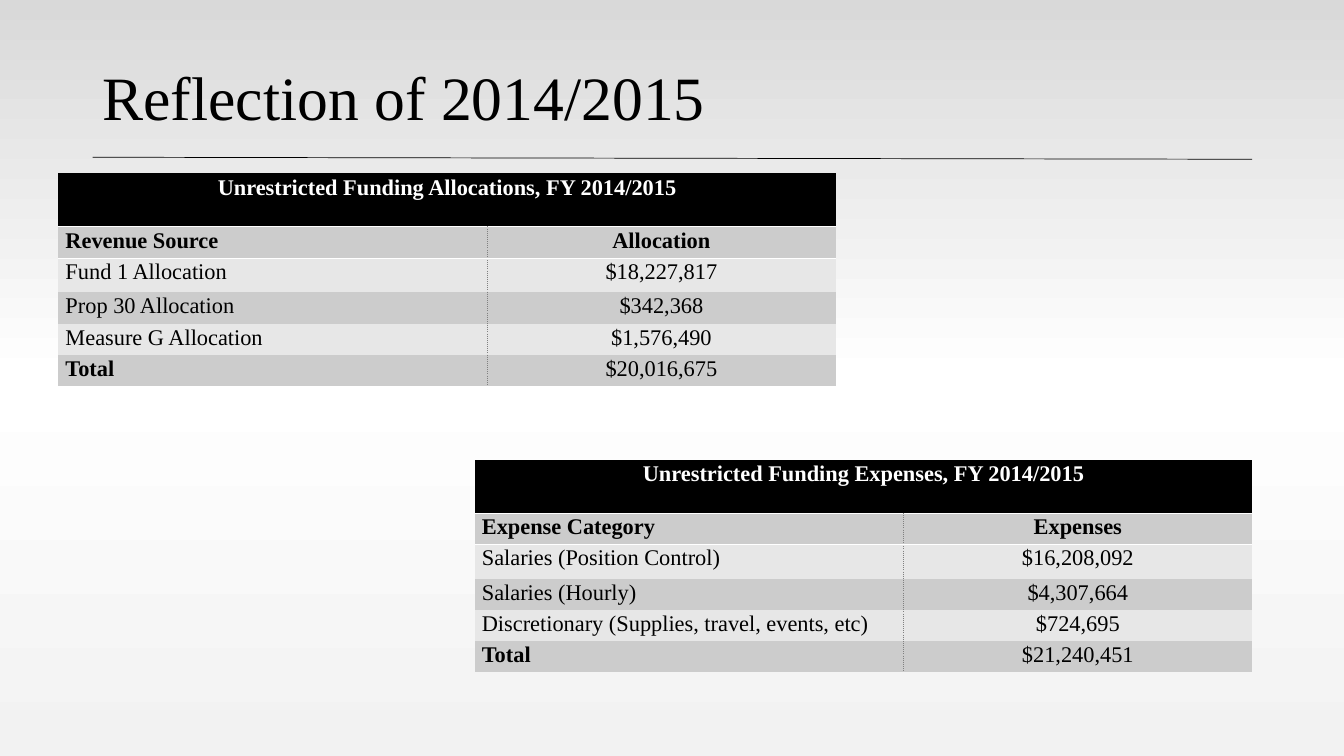
from copy import deepcopy

from pptx import Presentation
from pptx.dml.color import RGBColor
from pptx.enum.shapes import MSO_CONNECTOR
from pptx.enum.text import MSO_ANCHOR, PP_ALIGN
from pptx.oxml.ns import qn
from pptx.util import Inches, Pt
from lxml.etree import SubElement

BLACK = RGBColor(0x00, 0x00, 0x00)
WHITE = RGBColor(0xFF, 0xFF, 0xFF)
GRAY = RGBColor(0x80, 0x80, 0x80)
DARK_BAND = RGBColor(0xCC, 0xCC, 0xCC)
LIGHT_BAND = RGBColor(0xE7, 0xE7, 0xE7)
BACKGROUND = [(0, RGBColor(0xD9, 0xD9, 0xD9)), (0.5, WHITE),
              (1, RGBColor(0xF2, 0xF2, 0xF2))]
NO_TABLE_STYLE = "{2D5ABB26-0587-4C30-8999-92F81FD0307C}"


class BudgetSlide:
    font = "Times New Roman"
    column_widths = (4.25, 3.46)
    row_heights = (0.53, 0.31, 0.34, 0.31, 0.31, 0.31)

    def __init__(self, slide):
        self.slide = slide

    def background(self, colors):
        fill = self.slide.background.fill
        fill.gradient()
        fill.gradient_angle = 270
        stop_list = self.slide.element.find(".//" + qn("a:gsLst"))
        stop_list.append(deepcopy(stop_list[0]))
        for stop, (position, color) in zip(fill.gradient_stops, colors):
            stop.position = position
            stop.color.rgb = color

    def style(self, paragraph, size, color, bold, align, spacing):
        paragraph.alignment = align
        paragraph.line_spacing = spacing
        font = paragraph.font
        font.name, font.size, font.bold = self.font, Pt(size), bold
        font.color.rgb = color

    def title(self, text, left, top, width, height):
        box = self.slide.shapes.add_textbox(
            Inches(left), Inches(top), Inches(width), Inches(height))
        frame = box.text_frame
        frame.word_wrap = True
        frame.vertical_anchor = MSO_ANCHOR.MIDDLE
        frame.text = text
        self.style(frame.paragraphs[0], 44, BLACK, False, PP_ALIGN.LEFT, 0.9)

    def rule(self, x1, y1, x2, y2):
        rule = self.slide.shapes.add_connector(
            MSO_CONNECTOR.STRAIGHT, Inches(x1), Inches(y1), Inches(x2), Inches(y2))
        rule.line.color.rgb = BLACK
        rule.line.width = Pt(0.5)
        SubElement(rule.element.spPr, qn("a:effectLst"))

    def border(self, cell, side, color, dash):
        line = SubElement(cell._tc.get_or_add_tcPr(), qn("a:ln" + side), w=str(Pt(0.5)))
        fill = SubElement(line, qn("a:solidFill"))
        SubElement(fill, qn("a:srgbClr"), val=str(color))
        SubElement(line, qn("a:prstDash"), val=dash)

    def cell(self, cell, text, fill, color, bold, align):
        cell.margin_left = cell.margin_right = Inches(0.07)
        cell.margin_top = cell.margin_bottom = 0
        cell.fill.solid()
        cell.fill.fore_color.rgb = fill
        cell.text = text
        self.style(cell.text_frame.paragraphs[0], 16, color, bold, align, 1.07)

    def budget_table(self, left, top, heading, rows):
        frame = self.slide.shapes.add_table(
            len(rows) + 1, 2, Inches(left), Inches(top),
            Inches(sum(self.column_widths)), Inches(sum(self.row_heights)))
        table = frame.table
        table.first_row = table.horz_banding = False
        table._tbl.tblPr.find(qn("a:tableStyleId")).text = NO_TABLE_STYLE
        for column, width in zip(table.columns, self.column_widths):
            column.width = Inches(width)
        for row, height in zip(table.rows, self.row_heights):
            row.height = Inches(height)

        # Heading across both columns
        heading_cell = table.cell(0, 0)
        heading_cell.merge(table.cell(0, 1))
        self.border(heading_cell, "B", WHITE, "solid")
        self.cell(heading_cell, heading, BLACK, WHITE, True, PP_ALIGN.CENTER)

        # Banded rows; the column heads and the total label are bold
        for r, (label, amount) in enumerate(rows, start=1):
            band = DARK_BAND if r % 2 else LIGHT_BAND
            label_cell, amount_cell = table.cell(r, 0), table.cell(r, 1)
            self.border(label_cell, "R", GRAY, "sysDot")
            self.border(amount_cell, "L", GRAY, "sysDot")
            if r == 1:
                for head_cell in (label_cell, amount_cell):
                    self.border(head_cell, "T", WHITE, "solid")
                    self.border(head_cell, "B", WHITE, "solid")
            self.cell(label_cell, label, band, BLACK, r in (1, len(rows)), PP_ALIGN.LEFT)
            self.cell(amount_cell, amount, band, BLACK, r == 1, PP_ALIGN.CENTER)


def main():
    presentation = Presentation()
    presentation.slide_width = Inches(13.33)
    presentation.slide_height = Inches(7.5)
    budget = BudgetSlide(presentation.slides.add_slide(presentation.slide_layouts[6]))

    # Background, rule and title
    budget.background(BACKGROUND)
    budget.rule(0.92, 1.56, 12.42, 1.58)
    budget.title("Reflection of 2014/2015", 0.92, 0.27, 11.5, 1.45)

    # Expenses and allocations
    budget.budget_table(4.71, 4.56, "Unrestricted Funding Expenses, FY 2014/2015", [
        ("Expense Category", "Expenses"),
        ("Salaries (Position Control)", "$16,208,092"),
        ("Salaries (Hourly)", "$4,307,664"),
        ("Discretionary (Supplies, travel, events, etc)", "$724,695"),
        ("Total", "$21,240,451"),
    ])
    budget.budget_table(0.58, 1.72, "Unrestricted Funding Allocations, FY 2014/2015", [
        ("Revenue Source", "Allocation"),
        ("Fund 1 Allocation", "$18,227,817"),
        ("Prop 30 Allocation", "$342,368"),
        ("Measure G Allocation", "$1,576,490"),
        ("Total", "$20,016,675"),
    ])

    presentation.save("out.pptx")


if __name__ == "__main__":
    main()
